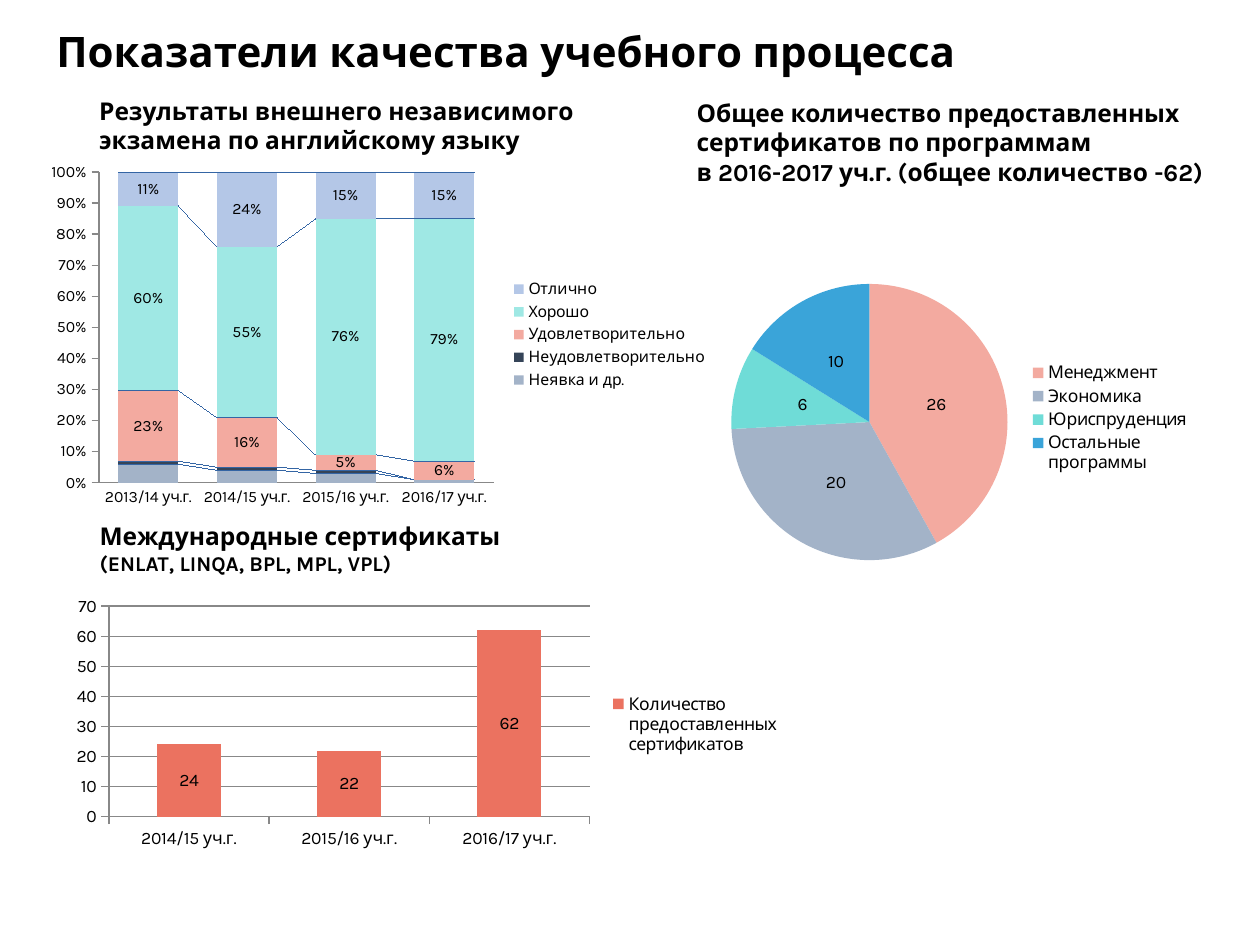
from collections import namedtuple

from lxml import etree
from pptx import Presentation
from pptx import util as u
from pptx.chart.data import CategoryChartData
from pptx.dml.color import RGBColor
from pptx.enum import chart as ch
from pptx.oxml import parse_xml
from pptx.oxml.ns import nsdecls, qn

FONT = "Karla"
BLACK, AXIS_GRAY, SERIES_LINE = "000000", "888888", "2F66A8"
SALMON, STEEL = "F3AAA0", "A3B3C8"


class Box(namedtuple("Box", "left top width height")):
    def inside(self, x, y, w, h):
        """Box inside this one, in percent of its width and height."""
        return Box(int(self.left + self.width * x / 100),
                   int(self.top + self.height * y / 100),
                   int(self.width * w / 100), int(self.height * h / 100))


def color(hex_value):
    return RGBColor.from_string(hex_value)


def add_heading(slide, box, lines, wrap=True):
    """Place bold lines given as (wording, size) pairs."""
    frame = slide.shapes.add_textbox(*box).text_frame
    frame.word_wrap = wrap
    for number, (wording, size) in enumerate(lines):
        line = frame.add_paragraph() if number else frame.paragraphs[0]
        line.text = wording
        line.font.name, line.font.size, line.font.bold = FONT, u.Pt(size), True
        line.font.color.rgb = color(BLACK)


def set_layout(parent, index, area, inner=False):
    """Fix a chart region at shares (x, y, w, h) of the chart."""
    for old in parent.findall(qn("c:layout")):
        parent.remove(old)
    layout = parse_xml(f"<c:layout {nsdecls('c')}><c:manualLayout/></c:layout>")
    settings = [("layoutTarget", "inner")] if inner else []
    settings += [("xMode", "edge"), ("yMode", "edge"), *zip("xywh", area)]
    for tag, value in settings:
        etree.SubElement(layout[0], qn(f"c:{tag}")).set("val", str(value))
    parent.insert(index, layout)


def add_chart(slide, box, kind, size, categories, series, plot_area, legend_area):
    data = CategoryChartData()
    data.categories = categories
    for name, values in series:
        data.add_series(name, values)
    chart = slide.shapes.add_chart(kind, *box, data).chart
    chart.has_title = False
    chart.font.name, chart.font.size = FONT, u.Pt(size)
    chart.font.color.rgb = color(BLACK)
    chart.has_legend = True
    legend = chart.legend
    legend.position = ch.XL_LEGEND_POSITION.RIGHT
    legend.include_in_layout = False
    set_layout(chart.element.find(".//" + qn("c:legend")), 1, legend_area)
    set_layout(chart.element.find(".//" + qn("c:plotArea")), 0, plot_area, True)
    return chart


def paint(item, hex_value):
    item.format.fill.solid()
    item.format.fill.fore_color.rgb = color(hex_value)


def show_values(series, number_format="General"):
    labels = series.data_labels
    labels.show_value = True
    labels.number_format = number_format
    labels.number_format_is_linked = False
    labels.position = ch.XL_LABEL_POSITION.CENTER


def gray_line(line):
    line.color.rgb = color(AXIS_GRAY)
    line.width = u.Pt(0.75)


def style_axes(chart, top, step, number_format, category_tick, grid):
    values, categories = chart.value_axis, chart.category_axis
    values.minimum_scale, values.maximum_scale, values.major_unit = 0, top, step
    values.has_major_gridlines = grid
    if grid:
        gray_line(values.major_gridlines.format.line)
    values.major_tick_mark = ch.XL_TICK_MARK.OUTSIDE
    values.tick_labels.number_format = number_format
    values.tick_labels.number_format_is_linked = False
    categories.major_tick_mark = category_tick
    for axis in (values, categories):
        gray_line(axis.format.line)


def add_series_lines(chart):
    overlap = chart.element.find(".//" + qn("c:overlap"))
    overlap.addnext(parse_xml(
        f'<c:serLines {nsdecls("c", "a")}><c:spPr><a:ln w="9525"><a:solidFill>'
        f'<a:srgbClr val="{SERIES_LINE}"/></a:solidFill></a:ln></c:spPr></c:serLines>'))


def exam_results(slide, box):
    add_heading(slide, box.inside(7.2, 0, 77.6, 16), [
        ("Результаты внешнего независимого экзамена по английскому языку", 14)])
    grades = [
        ("Неявка и др.", (0.06, 0.04, 0.03, 0.01), STEEL),
        ("Неудовлетворительно", (0.01, 0.01, 0.01, 0), "354458"),
        ("Удовлетворительно", (0.23, 0.16, 0.05, 0.06), SALMON),
        ("Хорошо", (0.6, 0.55, 0.76, 0.79), "9FE8E4"),
        ("Отлично", (0.11, 0.24, 0.15, 0.15), "B4C7E7"),
    ]
    years = [f"{year}/{year - 1999} уч.г." for year in range(2013, 2017)]
    chart = add_chart(slide, box.inside(0, 16, 100, 84),
                      ch.XL_CHART_TYPE.COLUMN_STACKED_100, 9, years,
                      [grade[:2] for grade in grades],
                      (0.09, 0.04, 0.58, 0.87), (0.69, 0.33, 0.3, 0.33))
    style_axes(chart, 1, 0.1, "0%", ch.XL_TICK_MARK.NONE, grid=False)
    plot = chart.plots[0]
    plot.gap_width, plot.overlap = 64, 100
    for number, (series, grade) in enumerate(zip(plot.series, grades)):
        paint(series, grade[2])
        if number >= 2:
            show_values(series, "0%")
    add_series_lines(chart)


def international_certificates(slide, box):
    add_heading(slide, box.inside(4, 0, 86.5, 20), [
        ("Международные сертификаты", 14), ("(ENLAT, LINQA, BPL, MPL, VPL)", 12)])
    years = [f"{year}/{year - 1999} уч.г." for year in range(2014, 2017)]
    chart = add_chart(slide, box.inside(0, 22.8, 100, 77),
                      ch.XL_CHART_TYPE.COLUMN_CLUSTERED, 10, years,
                      [("Количество предоставленных сертификатов", (24, 22, 62))],
                      (0.07, 0.05, 0.66, 0.8), (0.75, 0.38, 0.25, 0.24))
    style_axes(chart, 70, 10, "General", ch.XL_TICK_MARK.OUTSIDE, grid=True)
    plot = chart.plots[0]
    plot.gap_width, plot.vary_by_categories = 150, False
    paint(plot.series[0], "EB7260")
    show_values(plot.series[0])


def certificates_by_programme(slide, box):
    add_heading(slide, box.inside(0, 0, 100, 19), [
        ("Общее количество предоставленных сертификатов по программам", 14),
        ("в 2016-2017 уч.г. (общее количество -62)", 14)])
    programmes = [("Менеджмент", 26, SALMON), ("Экономика", 20, STEEL),
                  ("Юриспруденция", 6, "6FDCD7"), ("Остальные программы", 10, "3AA4D9")]
    names, counts, colors = zip(*programmes)
    chart = add_chart(slide, box.inside(5.8, 22.5, 86.3, 77.7),
                      ch.XL_CHART_TYPE.PIE, 10, names, [("Series 1", counts)],
                      (0.03, 0.17, 0.57, 0.66), (0.64, 0.35, 0.34, 0.28))
    pie = chart.plots[0].series[0]
    for number, hex_value in enumerate(colors):
        paint(pie.points[number], hex_value)
    show_values(pie)


def main():
    deck = Presentation()
    deck.slide_width, deck.slide_height = u.Inches(10), u.Inches(7.5)
    slide = deck.slides.add_slide(deck.slide_layouts[6])
    page = Box(0, 0, deck.slide_width, deck.slide_height)
    add_heading(slide, page.inside(3.5, 2, 73.6, 6.7),
                [("Показатели качества учебного процесса", 24)], wrap=False)
    exam_results(slide, page.inside(3, 9.5, 54, 45))
    international_certificates(slide, page.inside(4.6, 54.5, 57.8, 36.2))
    certificates_by_programme(slide, page.inside(54.3, 9.7, 44.6, 57))
    deck.save("out.pptx")


if __name__ == "__main__":
    main()
